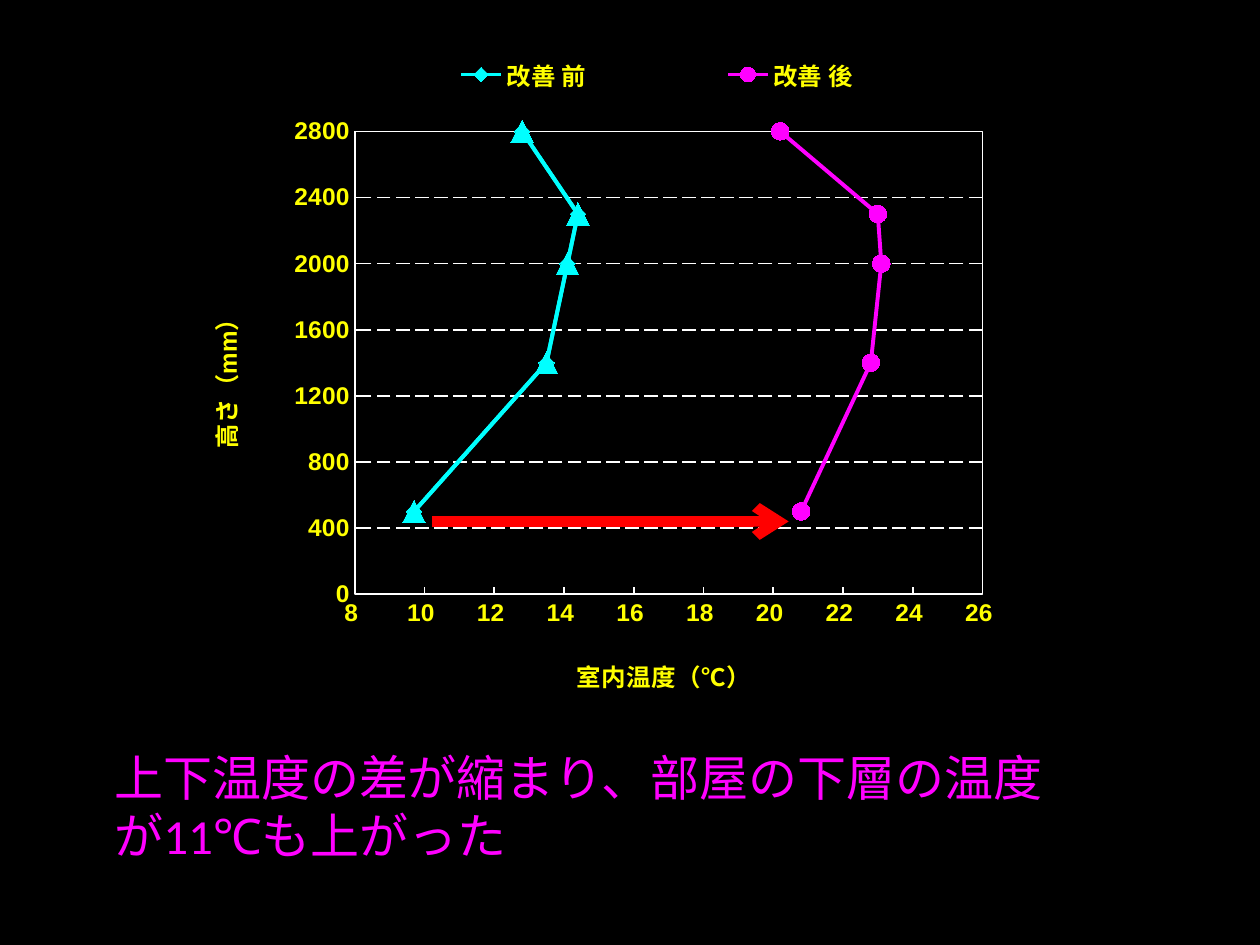
from pptx import Presentation
from pptx.chart.data import XyChartData
from pptx.dml.color import RGBColor
from pptx.enum.chart import (XL_AXIS_CROSSES, XL_CHART_TYPE, XL_LEGEND_POSITION,
                             XL_MARKER_STYLE, XL_TICK_MARK)
from pptx.enum.dml import MSO_LINE
from pptx.enum.shapes import MSO_CONNECTOR
from pptx.oxml import parse_xml
from pptx.oxml.ns import nsdecls, qn
from pptx.util import Pt


class Theme:
    back = RGBColor(0, 0, 0)
    frame = RGBColor(255, 255, 255)
    label = RGBColor(255, 255, 0)
    before = RGBColor(0, 255, 255)
    after = RGBColor(255, 0, 255)
    arrow = RGBColor(255, 0, 0)
    label_size = 14
    note_size = 28
    label_font = "Arial"
    note_font = "Calibri"


HEIGHTS = (2800, 2300, 2000, 1400, 500)
COLD = (12.8, 14.4, 14.1, 13.5, 9.7)
WARM = (20.2, 23, 23.1, 22.8, 20.8)
# name, temperatures, colour, marker, marker size
SERIES = (
    ("改善 前", COLD, Theme.before, XL_MARKER_STYLE.TRIANGLE, 13),
    ("改善 前", COLD, Theme.before, XL_MARKER_STYLE.DIAMOND, 9),
    ("改善 後", WARM, Theme.after, XL_MARKER_STYLE.CIRCLE, 10),
)


def style(font, size, color, name, bold=False):
    font.size, font.name, font.bold = Pt(size), name, bold
    font.color.rgb = color


def write(frame, text, **form):
    para = frame.paragraphs[0]
    run = para.add_run()
    run.text = text
    style(run.font, **form)


def stroke(line, color, width, dash=None):
    line.color.rgb = color
    line.width = Pt(width)
    if dash:
        line.dash_style = dash


def lay_out(parent, index, inner=False, **place):
    """Give a chart part its place, as fractions of the chart."""
    for old in parent.findall(qn("c:layout")):
        parent.remove(old)
    tags = '<c:layoutTarget val="inner"/>' if inner else ""
    tags += "".join(f'<c:{key}Mode val="edge"/>' for key in "xy")
    tags += "".join(f'<c:{key} val="{val}"/>' for key, val in place.items())
    parent.insert(index, parse_xml(
        f'<c:layout {nsdecls("c")}><c:manualLayout>{tags}'
        '</c:manualLayout></c:layout>'))


def set_axis(axis, title, low, high, step, turn, x, y):
    axis.minimum_scale, axis.maximum_scale = low, high
    axis.major_unit = step
    axis.major_tick_mark = XL_TICK_MARK.INSIDE
    axis.minor_tick_mark = XL_TICK_MARK.NONE
    axis.crosses = XL_AXIS_CROSSES.MINIMUM
    stroke(axis.format.line, Theme.frame, 1)
    head = axis.axis_title
    write(head.text_frame, title, size=Theme.label_size, color=Theme.label,
          name=Theme.label_font, bold=True)
    head.text_frame._txBody.bodyPr.set("rot", str(turn * 60000))
    lay_out(head._element, 1, x=x, y=y)


def add_graph(slide, left, top, width, height):
    data = XyChartData()
    for name, temps, *_ in SERIES:
        row = data.add_series(name)
        for temp, level in zip(temps, HEIGHTS):
            row.add_data_point(temp, level)
    chart = slide.shapes.add_chart(
        XL_CHART_TYPE.XY_SCATTER_LINES, Pt(left), Pt(top), Pt(width),
        Pt(height), data).chart
    chart.has_title = False
    style(chart.font, Theme.label_size, Theme.label, Theme.label_font, True)

    # Lines and markers
    plot = chart.plots[0]
    plot.vary_by_categories = False
    for row, (_, _, color, shape, size) in zip(plot.series, SERIES):
        row.smooth = False
        stroke(row.format.line, color, 2.25)
        row.marker.style, row.marker.size = shape, size
        row.marker.format.fill.solid()
        row.marker.format.fill.fore_color.rgb = color
        stroke(row.marker.format.line, color, 0.75)

    # Axes and grid
    across, up = chart.category_axis, chart.value_axis
    set_axis(across, "室内温度（℃）", 8, 26, 2, 0, 0.45, 0.94)
    set_axis(up, "高さ（mm）", 0, 2800, 400, -90, 0.1, 0.42)
    across.has_major_gridlines = False
    across.tick_labels.number_format = "0_ "
    across.tick_labels.number_format_is_linked = False
    up.has_major_gridlines = True
    stroke(up.major_gridlines.format.line, Theme.frame, 1, MSO_LINE.LONG_DASH)

    # Plot frame
    area = chart._chartSpace.chart.plotArea
    lay_out(area, 0, inner=True, x=0.245, y=0.165, w=0.591, h=0.691)
    area.append(parse_xml(
        f'<c:spPr {nsdecls("c", "a")}><a:noFill/><a:ln w="{Pt(1)}"><a:solidFill>'
        f'<a:srgbClr val="{Theme.frame}"/></a:solidFill></a:ln></c:spPr>'))

    # Legend, one entry for each colour
    chart.has_legend = True
    legend = chart.legend
    legend.position = XL_LEGEND_POSITION.TOP
    legend.include_in_layout = False
    lay_out(legend._element, 1, x=0.22, y=0.05, w=0.62, h=0.06)
    legend._element.insert(1, parse_xml(
        f'<c:legendEntry {nsdecls("c")}><c:idx val="0"/><c:delete val="1"/>'
        '</c:legendEntry>'))


def add_note(slide, left, top, width, height):
    box = slide.shapes.add_textbox(Pt(left), Pt(top), Pt(width), Pt(height))
    box.text_frame.word_wrap = True
    write(box.text_frame, "上下温度の差が縮まり、部屋の下層の温度が11℃も上がった",
          size=Theme.note_size, color=Theme.after, name=Theme.note_font)


def add_arrow(slide, left, top, width):
    line = slide.shapes.add_connector(
        MSO_CONNECTOR.STRAIGHT, Pt(left), Pt(top), Pt(left + width), Pt(top))
    stroke(line.line, Theme.arrow, 6)
    line.line._get_or_add_ln().append(
        parse_xml(f'<a:tailEnd {nsdecls("a")} type="arrow"/>'))
    line._element.spPr.append(parse_xml(f'<a:effectLst {nsdecls("a")}/>'))


def main():
    deck = Presentation()
    deck.slide_width, deck.slide_height = Pt(720), Pt(540)
    slide = deck.slides.add_slide(deck.slide_layouts[6])
    slide.background.fill.solid()
    slide.background.fill.fore_color.rgb = Theme.back
    add_graph(slide, 54, 12, 607, 388)
    add_note(slide, 58.3, 423.4, 566.6, 75)
    add_arrow(slide, 247, 298, 203.7)
    deck.save("out.pptx")


if __name__ == "__main__":
    main()
